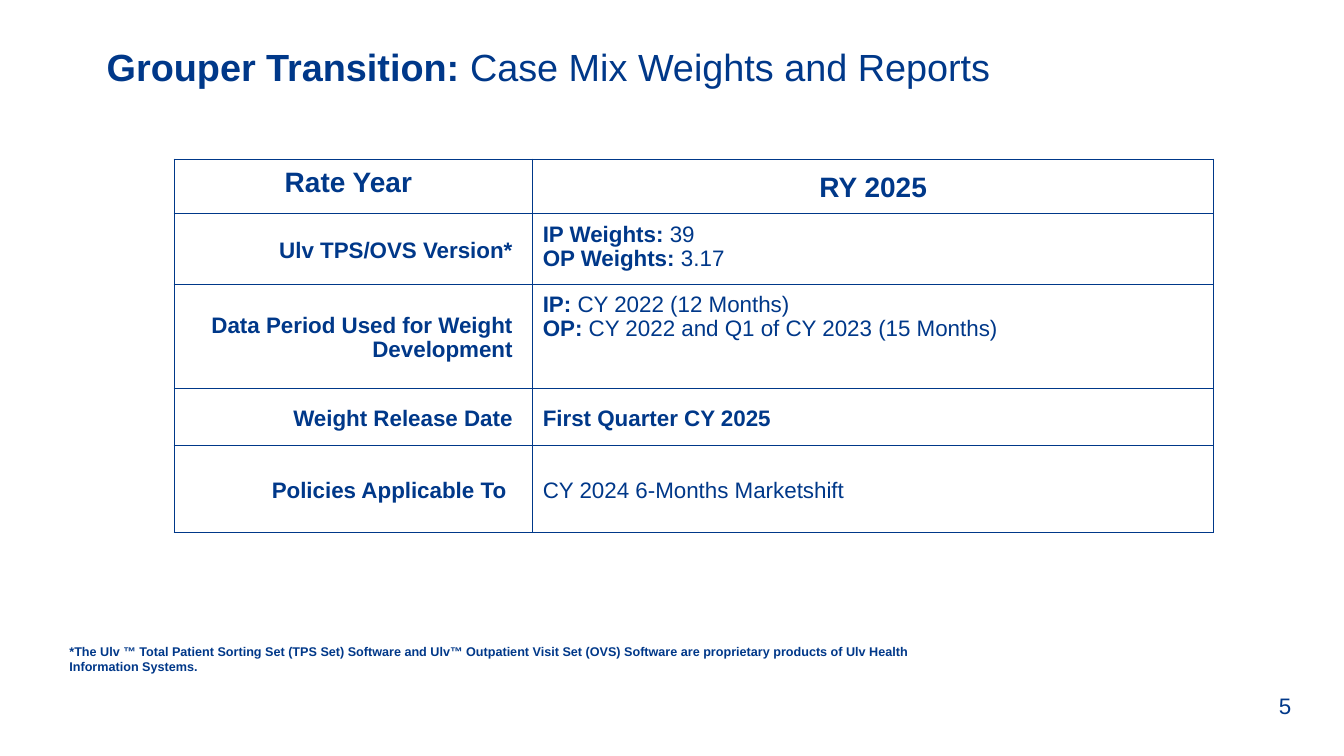
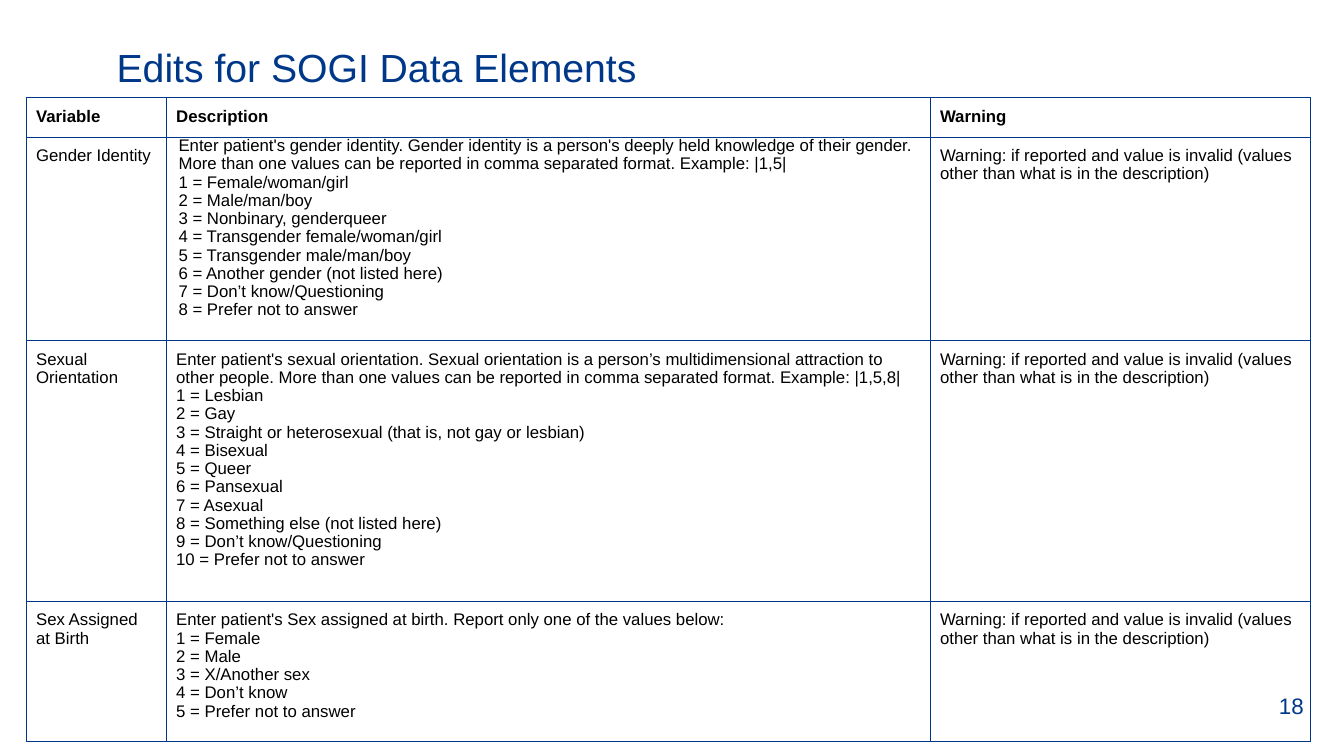
import pptx
import pptx.dml.color
import pptx.enum.text
import pptx.oxml
import pptx.oxml.ns
import pptx.util
from pptx.util import Cm

COLORS = {"navy": "003889", "black": "000000"}
FONT = "Arial"
ALIGN = pptx.enum.text.PP_ALIGN
ANCHOR = pptx.enum.text.MSO_ANCHOR
PLAIN_MARGINS = (0.25, 0.13, 0.25, 0.13)


def set_margins(target, margins):
    """Set left, top, right and bottom margins, in cm, of a frame or cell."""
    for side, length in zip(("left", "top", "right", "bottom"), margins):
        setattr(target, f"margin_{side}", Cm(length))


def write_text(frame, text, size=16, color="navy", bold=False,
               align=ALIGN.LEFT, spacing=1.0):
    """Write one paragraph a line; parts between double asterisks are bold."""
    for number, line in enumerate(text.split("\n")):
        para = frame.add_paragraph() if number else frame.paragraphs[0]
        para.alignment = align
        para.line_spacing = spacing
        for index, part in enumerate(line.split("**")):
            if not part:
                continue
            span = para.add_run()
            span.text = part
            span.font.name = FONT
            span.font.size = pptx.util.Pt(size)
            span.font.bold = bold or index % 2 == 1
            span.font.color.rgb = pptx.dml.color.RGBColor.from_string(COLORS[color])


def set_borders(cell, color, width):
    """Draw all four borders of a cell; they must come before its fill."""
    properties = cell._tc.get_or_add_tcPr()
    for position, side in enumerate(("lnL", "lnR", "lnT", "lnB")):
        properties.insert(position, pptx.oxml.parse_xml(
            f'<a:{side} {pptx.oxml.ns.nsdecls("a")} w="{pptx.util.Pt(width)}">'
            f'<a:solidFill><a:srgbClr val="{COLORS[color]}"/></a:solidFill>'
            f'</a:{side}>'))


class Builder:
    """Holds the deck, its style and the current page."""

    def __init__(self):
        self.deck = pptx.Presentation()
        self.deck.slide_width = Cm(33.87)
        self.deck.slide_height = Cm(19.05)
        self.page = None

    def start_page(self, title, number, left, size):
        self.page = self.deck.slides.add_slide(self.deck.slide_layouts[5])
        box = self.page.shapes.title
        box.left, box.top = Cm(left), Cm(0.97)
        box.width, box.height = Cm(31.9 - left), Cm(1.68)
        frame = box.text_frame
        frame.word_wrap = True
        frame.auto_size = pptx.enum.text.MSO_AUTO_SIZE.NONE
        frame.vertical_anchor = ANCHOR.TOP
        set_margins(frame, PLAIN_MARGINS)
        write_text(frame, title, size=size)
        self.add_text(str(number), (31.98, 17.27, 1.6, 1.02), anchor=ANCHOR.MIDDLE)

    def add_text(self, text, area, anchor=ANCHOR.TOP, margins=PLAIN_MARGINS, **style):
        box = self.page.shapes.add_textbox(*map(Cm, area))
        frame = box.text_frame
        frame.word_wrap = True
        frame.vertical_anchor = anchor
        set_margins(frame, margins)
        write_text(frame, text, **style)

    def add_table(self, left, top, columns, rows, cells, border):
        """Each cell is a dict: text, margins, anchor and text format."""
        table = self.page.shapes.add_table(
            len(rows), len(columns), Cm(left), Cm(top),
            Cm(sum(columns)), Cm(sum(rows))).table
        table.first_row = table.horz_banding = False
        for column, width in zip(table.columns, columns):
            column.width = Cm(width)
        for row, height, contents in zip(table.rows, rows, cells):
            row.height = Cm(height)
            for cell, content in zip(row.cells, contents):
                style = dict(content)
                set_margins(cell, style.pop("margins"))
                cell.vertical_anchor = style.pop("anchor", ANCHOR.TOP)
                cell.fill.background()
                set_borders(cell, "navy", border)
                write_text(cell.text_frame, **style)

    def save(self):
        self.deck.save("out.pptx")


def add_weights_page(builder):
    builder.start_page("**Grouper Transition: **Case Mix Weights and Reports",
                       5, left=2.44, size=27)

    # Table: heading row, then right-aligned labels beside their values
    label = {"margins": (0.25, 0.25, 0.51, 0.13), "bold": True, "spacing": 0.95}
    value = {"margins": (0.25, 0.25, 0.25, 0.13), "spacing": 0.95}
    heading = {"size": 20, "bold": True, "align": ALIGN.CENTER}
    entries = [
        ("Ulv TPS/OVS Version*",
         "**IP Weights:** 39\n**OP Weights:** 3.17", ANCHOR.TOP),
        ("Data Period Used for Weight Development",
         "**IP: **CY 2022 (12 Months)\n"
         "**OP:** CY 2022 and Q1 of CY 2023 (15 Months)", ANCHOR.TOP),
        ("Weight Release Date", "**First Quarter CY 2025**", ANCHOR.MIDDLE),
        ("Policies Applicable To ", "CY 2024 6-Months Marketshift", ANCHOR.MIDDLE),
    ]
    cells = [[{**label, **heading, "text": "Rate Year"},
              {**value, **heading, "text": "RY 2025", "anchor": ANCHOR.MIDDLE}]]
    for name, text, anchor in entries:
        cells.append([
            {**label, "text": name, "align": ALIGN.RIGHT, "anchor": ANCHOR.MIDDLE},
            {**value, "text": text, "anchor": anchor}])
    builder.add_table(4.39, 4.01, (9.04, 17.15), (1.37, 1.78, 2.62, 1.45, 2.18),
                      cells, border=1)

    # Footnote
    builder.add_text(
        "*The Ulv ™ Total Patient Sorting Set (TPS Set) Software and Ulv™ Outpatient "
        "Visit Set (OVS) Software are proprietary products of Ulv Health Information "
        "Systems.",
        (1.5, 15.98, 22.81, 1.27), margins=(0.25,) * 4, size=9, bold=True)


def add_edits_page(builder):
    builder.start_page("Edits for SOGI Data Elements", 18, left=2.69, size=28)

    # Variables: name, introduction and the answers, numbered from 1
    variables = [
        ("Gender Identity",
         "Enter patient's gender identity. Gender identity is a person's deeply held "
         "knowledge of their gender. More than one values can be reported in comma "
         "separated format. Example: |1,5|",
         ("Female/woman/girl", "Male/man/boy", "Nonbinary, genderqueer",
          "Transgender female/woman/girl", "Transgender male/man/boy",
          "Another gender (not listed here)", "Don’t know/Questioning",
          "Prefer not to answer")),
        ("Sexual Orientation",
         "Enter patient's sexual orientation. Sexual orientation is a person’s "
         "multidimensional attraction to other people. More than one values can be "
         "reported in comma separated format. Example: |1,5,8|",
         ("Lesbian", "Gay", "Straight or heterosexual (that is, not gay or lesbian)",
          "Bisexual", "Queer", "Pansexual", "Asexual",
          "Something else (not listed here)", "Don’t know/Questioning",
          "Prefer not to answer")),
        ("Sex Assigned at Birth",
         "Enter patient's Sex assigned at birth. Report only one of the values below:",
         ("Female", "Male", "X/Another sex", "Don’t know", "Prefer not to answer")),
    ]
    warning = ("Warning: if reported and value is invalid "
               "(values other than what is in the description)")

    # Table
    style = {"margins": (0.25,) * 4, "size": 12, "color": "black", "spacing": 0.97}
    cells = [[{**style, "text": text, "bold": True}
              for text in ("Variable", "Description", "Warning")]]
    for name, introduction, answers in variables:
        lines = [f"{code} = {answer}" for code, answer in enumerate(answers, 1)]
        description = "\n".join([introduction, *lines])
        cells.append([{**style, "text": text}
                      for text in (name, description, warning)])
    cells[1][1]["margins"] = (0.31, 0, 0, 0)
    builder.add_table(0.66, 2.46, (3.53, 19.25, 9.58), (0.97, 5.13, 6.57, 3.53),
                      cells, border=0.75)


def main():
    builder = Builder()
    add_weights_page(builder)
    add_edits_page(builder)
    builder.save()


if __name__ == "__main__":
    main()
